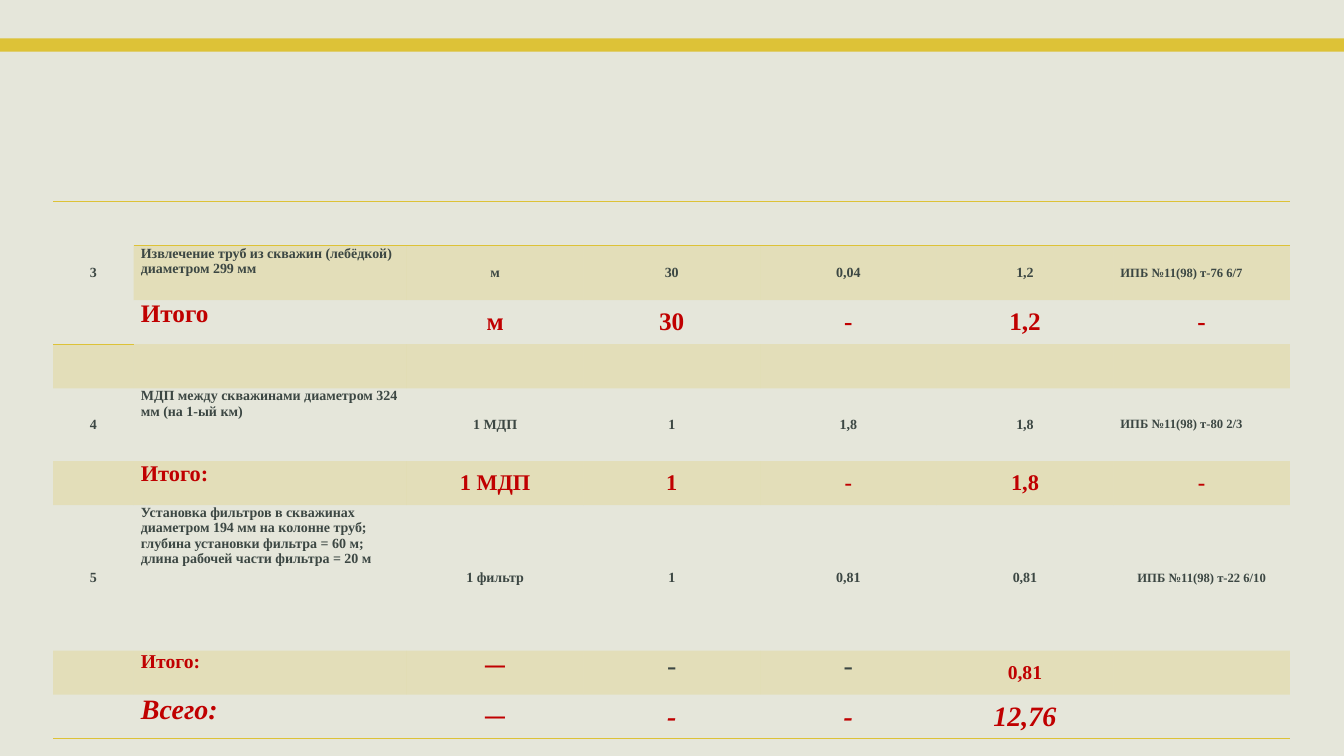
from lxml.etree import SubElement
from pptx import Presentation
from pptx.dml.color import RGBColor
from pptx.enum.shapes import MSO_SHAPE
from pptx.enum.text import MSO_ANCHOR, PP_ALIGN
from pptx.oxml import parse_xml
from pptx.oxml.ns import nsdecls, qn
from pptx.util import Cm, Pt

GOLD, GREY, RED = "DDC237", "3C4743", "C00000"
NO_STYLE = "{2D5ABB26-0587-4C30-8999-92F81FD0307C}"
COLS = [2.03, 6.88] + [4.45] * 5

ITEM = {"size": 10, "color": GREY, "bold": True, "italic": False}
SUM18 = {**ITEM, "size": 18, "color": RED}
SUM16 = {**SUM18, "size": 16}
SUM14 = {**SUM18, "size": 14}
TOTAL = {**SUM18, "size": 20, "italic": True}
DASH = {**ITEM, "size": 20, "bold": False}

ROWS = [
    (1.11, False, ITEM, ["3"]),
    (1.37, True, ITEM, ["", "Извлечение труб из скважин (лебёдкой) диаметром 299 мм",
                        "м", "30", "0,04", "1,2", "ИПБ №11(98) т-76 6/7"]),
    (1.11, False, SUM18, ["", "Итого", "м", "30", "-", "1,2", "-"]),
    (1.11, True, ITEM, []),
    (1.83, False, ITEM, ["4", "МДП между скважинами диаметром 324 мм (на 1-ый км)",
                         "1 МДП", "1", "1,8", "1,8", "ИПБ №11(98) т-80 2/3"]),
    (1.11, True, SUM16, ["", "Итого:", "1 МДП", "1", "-", "1,8", "-"]),
    (3.66, False, ITEM, ["5", "Установка фильтров в скважинах диаметром 194 мм на колонне труб; "
                         "глубина установки фильтра = 60 м;\nдлина рабочей части фильтра = 20 м",
                         "1 фильтр", "1", "0,81", "0,81", "ИПБ №11(98) т-22 6/10"]),
    (1.11, True, SUM14, ["", "Итого:", "─", "-", "-", "0,81"]),
    (1.11, False, TOTAL, ["", "Всего:", "─", "-", "-", "12,76"]),
]
SUBTOTAL = 7
LEFT_REFS = {(1, 6), (4, 6)}
TOP_CELLS = {(SUBTOTAL, c) for c in (2, 3, 4)}
FORMATS = {(SUBTOTAL, 2): TOTAL, (SUBTOTAL, 3): DASH, (SUBTOTAL, 4): DASH}


def rgb(color):
    return RGBColor.from_string(color)


def fill_cell(cell, banded):
    if not banded:
        cell.fill.background()
        return
    cell.fill.solid()
    cell.fill.fore_color.rgb = rgb(GOLD)
    clr = cell._tc.tcPr.find(qn("a:solidFill")).find(qn("a:srgbClr"))
    SubElement(clr, qn("a:alpha"), val="20000")


def border_cell(cell, sides):
    for i, side in enumerate(sides):
        cell._tc.get_or_add_tcPr().insert(i, parse_xml(
            f'<a:ln{side} {nsdecls("a")} w="12700"><a:solidFill>'
            f'<a:srgbClr val="{GOLD}"/></a:solidFill></a:ln{side}>'))


def write_cell(cell, text, align, anchor, fmt):
    cell.text = text
    cell.vertical_anchor = anchor
    for side, value in {"left": 0.18, "right": 0.18, "top": 0, "bottom": 0}.items():
        setattr(cell, f"margin_{side}", Cm(value))
    font_values = {"name": "Times New Roman", "size": Pt(fmt["size"]),
                   "bold": fmt["bold"], "italic": fmt["italic"]}
    for p in cell.text_frame.paragraphs:
        p.alignment = align
        for r in p.runs:
            for name, value in font_values.items():
                setattr(r.font, name, value)
            r.font.color.rgb = rgb(fmt["color"])


def add_bar(slide, left, top, width, height):
    sp = slide.shapes.add_shape(MSO_SHAPE.RECTANGLE, left, top, width, height)
    sp.shadow.inherit = False
    sp.fill.solid()
    sp.fill.fore_color.rgb = rgb(GOLD)
    sp.line.fill.background()


def add_works_table(slide, left, top, width, height):
    table = slide.shapes.add_table(len(ROWS), len(COLS), left, top, width, height).table
    table.first_row = table.horz_banding = False
    table._tbl.tblPr.find(qn("a:tableStyleId")).text = NO_STYLE
    for col, size in zip(table.columns, COLS):
        col.width = int(width * size / sum(COLS))
    total = sum(row[0] for row in ROWS)
    table.cell(0, 0).merge(table.cell(2, 0))
    for r, (size, banded, row_fmt, texts) in enumerate(ROWS):
        table.rows[r].height = int(height * size / total)
        for c in range(len(COLS)):
            cell = table.cell(r, c)
            fill_cell(cell, banded and not cell.is_spanned)
            border_cell(cell, {0: "TB", len(ROWS) - 1: "B"}.get(r, ""))
            text = texts[c] if c < len(texts) else ""
            if not text:
                continue
            fmt = FORMATS.get((r, c), row_fmt)
            if text.startswith("ИПБ"):
                fmt = {**fmt, "size": 9}
            to_left = c == 1 or (r, c) in LEFT_REFS
            to_top = c == 1 or (r, c) in TOP_CELLS
            write_cell(cell, text, PP_ALIGN.LEFT if to_left else PP_ALIGN.CENTER,
                       MSO_ANCHOR.TOP if to_top else MSO_ANCHOR.MIDDLE, fmt)


def main():
    prs = Presentation()
    prs.slide_width, prs.slide_height = Cm(33.87), Cm(19.05)
    slide = prs.slides.add_slide(prs.slide_layouts[6])
    slide.background.fill.solid()
    slide.background.fill.fore_color.rgb = rgb("E5E6DA")
    add_bar(slide, 0, Cm(0.97), prs.slide_width, Cm(0.33))
    add_works_table(slide, Cm(1.34), Cm(5.08), Cm(31.17), Cm(13.54))
    prs.save("out.pptx")


if __name__ == "__main__":
    main()
